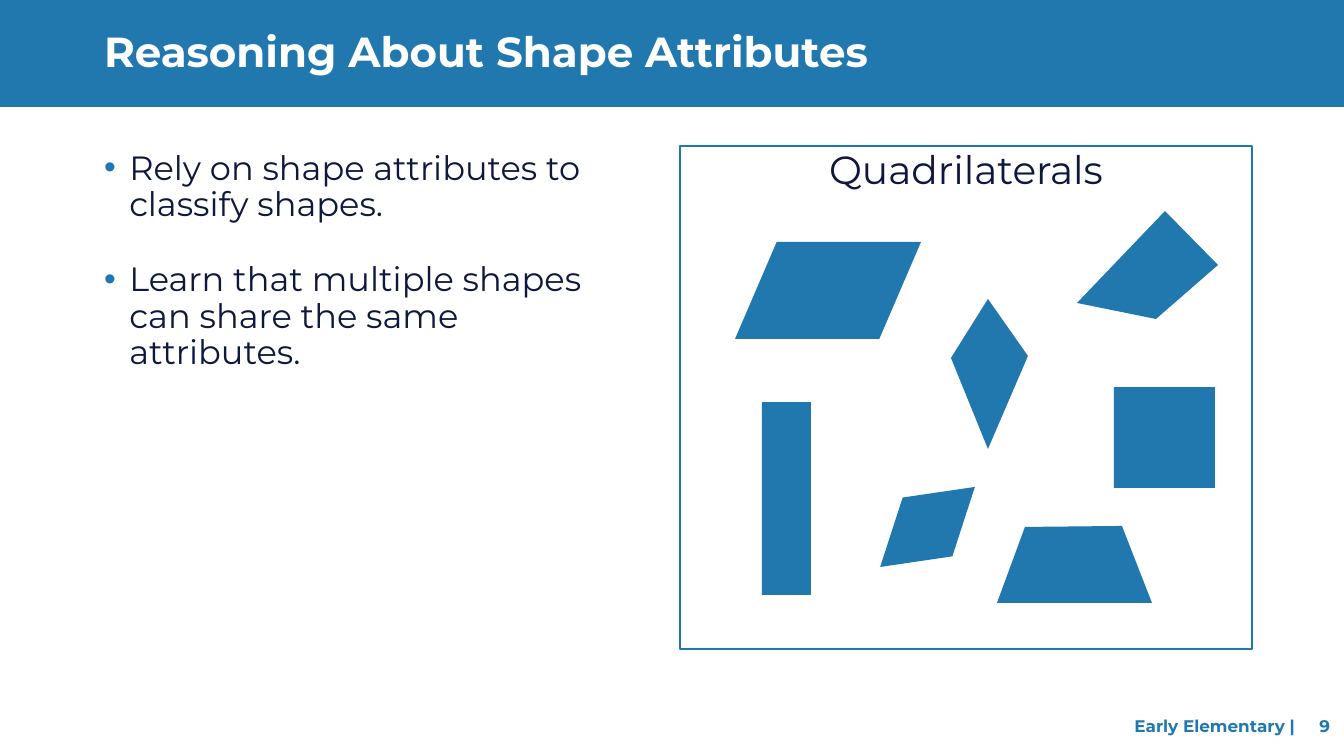
from lxml import etree
from pptx import Presentation
from pptx.dml.color import RGBColor
from pptx.enum import shapes, text
from pptx.oxml.ns import qn
from pptx import util as u

PX = u.Inches(1) / 100.8
KIND = shapes.MSO_SHAPE
ALIGN = text.PP_ALIGN
ANCHOR = text.MSO_ANCHOR


def px(length):
    return u.Emu(round(length * PX))


def colour(hex_string):
    return RGBColor.from_string(hex_string)


def set_all(target, values):
    for name, value in values.items():
        setattr(target, name, value)


class SlideBuilder:
    FONT = "Montserrat"
    BLUE, BULLET_BLUE, NAVY, WHITE = "2078AE", "2078B0", "0F173D", "FFFFFF"

    def __init__(self, deck):
        self.page = deck.slides.add_slide(deck.slide_layouts[1])
        self.canvas = self.page.shapes

    def place(self, box, left, top, width, height):
        set_all(box, {"left": px(left), "top": px(top),
                      "width": px(width), "height": px(height)})

    def add_words(self, para, words, size, ink, bold=False, **layout):
        set_all(para, layout)
        span = para.add_run()
        span.text = words
        set_all(span.font, {"name": self.FONT, "size": u.Pt(size), "bold": bold})
        span.font.color.rgb = colour(ink)

    def frame(self, box, anchor=ANCHOR.TOP):
        """Set wrapping and anchoring, and return the text frame."""
        set_all(box.text_frame, {"word_wrap": True, "vertical_anchor": anchor,
                                 "auto_size": text.MSO_AUTO_SIZE.NONE})
        return box.text_frame

    def paint(self, shape):
        shape.shadow.inherit = False
        shape.fill.solid()
        shape.fill.fore_color.rgb = colour(self.BLUE)
        shape.line.fill.background()
        return shape

    def title(self, words, *area):
        box = self.page.shapes.title
        self.place(box, *area)
        self.add_words(self.frame(box).paragraphs[0], words, 30, self.WHITE, True,
                       alignment=ALIGN.LEFT, line_spacing=0.9)

    def banner(self, *area):
        """Draw the coloured band behind the title."""
        band = self.preset(KIND.RECTANGLE, *area)
        self.page.shapes.title.element.addprevious(band.element)

    def bullets(self, items, *area):
        box = self.page.placeholders[1]
        self.place(box, *area)
        frame = self.frame(box)
        for index, words in enumerate(items):
            para = frame.add_paragraph() if index else frame.paragraphs[0]
            self.add_bullet(para)
            last = index == len(items) - 1
            self.add_words(para, words, 24, self.NAVY, line_spacing=0.9,
                           space_before=u.Pt(10 if index else 0),
                           space_after=u.Pt(0 if last else 18))

    def add_bullet(self, para):
        props = para._p.get_or_add_pPr()
        props.set("marL", str(u.Inches(0.25)))
        props.set("indent", str(-u.Inches(0.25)))
        ink = etree.SubElement(props, qn("a:buClr"))
        etree.SubElement(ink, qn("a:srgbClr"), val=self.BULLET_BLUE)
        etree.SubElement(props, qn("a:buFont"), typeface="Arial")
        etree.SubElement(props, qn("a:buChar"), char="•")

    def panel(self, heading, *area):
        """Draw an outlined box with a centred heading at its top."""
        box = self.preset(KIND.RECTANGLE, *area)
        box.fill.background()
        box.line.color.rgb = colour(self.BLUE)
        box.line.width = u.Pt(1.5)
        self.add_words(self.frame(box).paragraphs[0], heading, 28, self.NAVY,
                       alignment=ALIGN.CENTER, line_spacing=0.9)

    def label(self, words, *area):
        box = self.page.shapes.add_textbox(*map(px, area))
        self.add_words(self.frame(box, ANCHOR.MIDDLE).paragraphs[0], words, 12,
                       self.BLUE, True, alignment=ALIGN.RIGHT)

    def start_group(self):
        self.canvas = self.page.shapes.add_group_shape().shapes

    def preset(self, kind, *area, turn=0, adjust=None):
        shape = self.paint(self.canvas.add_shape(kind, *map(px, area)))
        shape.rotation = turn
        if adjust is not None:
            shape.adjustments[0] = adjust
        return shape

    def polygon(self, first, *others):
        outline = self.canvas.build_freeform(*first, scale=PX)
        outline.add_line_segments(others, close=True)
        return self.paint(outline.convert_to_shape())


def main():
    deck = Presentation()
    set_all(deck, {"slide_width": px(1344), "slide_height": px(756)})
    slide = SlideBuilder(deck)

    slide.banner(0, 0, 1344, 107)
    slide.title("Reasoning About Shape Attributes", 94, 26, 1194, 56)
    slide.bullets(["Rely on shape attributes to classify shapes.",
                   "Learn that multiple shapes can share the same attributes."],
                  94, 146, 542, 472)
    slide.panel("Quadrilaterals", 680, 146, 572, 503)
    slide.label("Early Elementary |", 957, 706, 348, 40)
    slide.label("9", 1300, 706, 40, 40)

    slide.start_group()
    slide.preset(KIND.RECTANGLE, 1114, 387, 101, 101)
    slide.preset(KIND.RECTANGLE, 762, 402, 49, 193)
    slide.preset(KIND.PARALLELOGRAM, 735, 242, 186, 97, adjust=0.43)
    slide.polygon((1025, 527), (1122, 526), (1152, 603), (997, 603))
    slide.polygon((1165, 211), (1218, 265), (1156, 319), (1077, 303))
    slide.preset(KIND.DIAMOND, 889, 465, 77, 124, turn=49.8)
    slide.polygon((951, 358), (988, 299), (1028, 356), (988, 449))
    deck.save("out.pptx")


if __name__ == "__main__":
    main()
